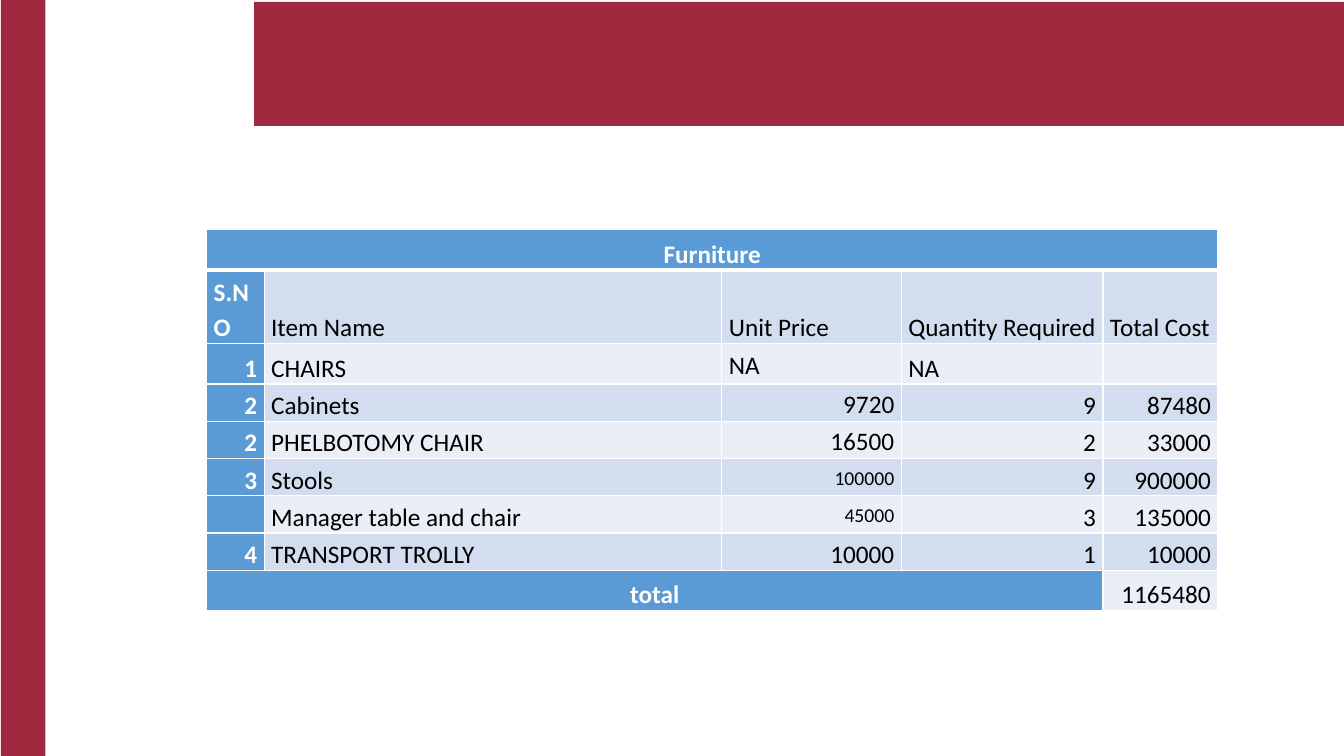
from dataclasses import dataclass

import pptx
import pptx.dml.color
import pptx.enum.shapes
import pptx.enum.text
import pptx.oxml
import pptx.oxml.ns
import pptx.util

Inches = pptx.util.Inches
Pt = pptx.util.Pt
ALIGN = pptx.enum.text.PP_ALIGN
ANCHOR = pptx.enum.text.MSO_ANCHOR


@dataclass(frozen=True)
class Theme:
    font: str = "Calibri"
    size: int = 18
    small: int = 14
    crimson: str = "A0293F"
    blue: str = "5B9BD5"
    band_dark: str = "D2DEEF"
    band_light: str = "EAEFF7"
    white: str = "FFFFFF"
    black: str = "000000"


THEME = Theme()
COL_WIDTHS = [0.57, 4.54, 1.78, 2, 1.14]
ROW_HEIGHTS = [0.4, 0.73, 0.4] + [0.37] * 5 + [0.4]
ROWS = [
    ["Furniture", "", "", "", ""],
    ["S.NO", "Item Name", "Unit Price", "Quantity Required", "Total Cost"],
    ["1", "CHAIRS", "NA", "NA", ""],
    ["2", "Cabinets", "9720", "9", "87480"],
    ["2", "PHELBOTOMY CHAIR", "16500", "2", "33000"],
    ["3", "Stools", "100000", "9", "900000"],
    ["", "Manager table and chair", "45000", "3", "135000"],
    ["4", "TRANSPORT TROLLY", "10000", "1", "10000"],
    ["total", "", "", "", "1165480"],
]
TITLE_ROW, TOTAL_ROW = 0, len(ROWS) - 1
PRICE_COL, TOTAL_COL = 2, len(COL_WIDTHS) - 1
MIDDLE_PRICE_ROWS = range(2, 7)
SMALL_PRICES = ("100000", "45000")


def rgb(color):
    return pptx.dml.color.RGBColor.from_string(color)


def write(tf, text, *, size=THEME.size, color=THEME.black, bold=False, align=ALIGN.LEFT):
    p = tf.paragraphs[0]
    p.alignment = align
    p.line_spacing = 1.15
    if not text:
        return
    r = p.add_run()
    r.text = text
    r.font.name = THEME.font
    r.font.size = Pt(size)
    r.font.bold = bold
    r.font.color.rgb = rgb(color)


def add_bar(slide, left, top, width, height):
    sp = slide.shapes.add_shape(
        pptx.enum.shapes.MSO_SHAPE.RECTANGLE,
        Inches(left), Inches(top), Inches(width), Inches(height))
    sp.shadow.inherit = False
    sp.fill.solid()
    sp.fill.fore_color.rgb = rgb(THEME.crimson)
    sp.line.fill.background()


def set_borders(cell, **widths):
    """Draw white borders, 1 pt wide unless a side (L, R, T, B) says otherwise."""
    tc_pr = cell._tc.get_or_add_tcPr()
    for side in "LRTB":
        tc_pr.append(pptx.oxml.parse_xml(
            f'<a:ln{side} {pptx.oxml.ns.nsdecls("a")} w="{Pt(widths.get(side, 1))}">'
            f'<a:solidFill><a:srgbClr val="{THEME.white}"/></a:solidFill></a:ln{side}>'))


def format_cell(cell, text, row, col):
    is_banner = row == TITLE_ROW or (row == TOTAL_ROW and col < TOTAL_COL)
    is_head = is_banner or col == 0
    band = THEME.band_dark if row % 2 else THEME.band_light
    if is_banner:
        align = ALIGN.CENTER
    else:
        align = ALIGN.RIGHT if text.isdigit() else ALIGN.LEFT

    cell.margin_left = cell.margin_right = Inches(0.07)
    cell.margin_top = cell.margin_bottom = 0
    is_middle = col == PRICE_COL and row in MIDDLE_PRICE_ROWS
    cell.vertical_anchor = ANCHOR.MIDDLE if is_middle else ANCHOR.BOTTOM
    set_borders(cell, B=3 if row == TITLE_ROW else 1, T=3 if row == TITLE_ROW + 1 else 1)
    cell.fill.solid()
    cell.fill.fore_color.rgb = rgb(THEME.blue if is_head else band)
    write(cell.text_frame, text, bold=is_head, align=align,
          size=THEME.small if col == PRICE_COL and text in SMALL_PRICES else THEME.size,
          color=THEME.white if is_head else THEME.black)


def add_furniture_table(slide, left, top):
    table = slide.shapes.add_table(
        len(ROWS), len(COL_WIDTHS), Inches(left), Inches(top),
        Inches(sum(COL_WIDTHS)), Inches(sum(ROW_HEIGHTS))).table
    for column, width in zip(table.columns, COL_WIDTHS):
        column.width = Inches(width)
    for row, height in zip(table.rows, ROW_HEIGHTS):
        row.height = Inches(height)
    for i, texts in enumerate(ROWS):
        for j, text in enumerate(texts):
            format_cell(table.cell(i, j), text, i, j)
    table.cell(TITLE_ROW, 0).merge(table.cell(TITLE_ROW, TOTAL_COL))
    table.cell(TOTAL_ROW, 0).merge(table.cell(TOTAL_ROW, TOTAL_COL - 1))


def main():
    prs = pptx.Presentation()
    prs.slide_width, prs.slide_height = Inches(13.33), Inches(7.5)
    slide = prs.slides.add_slide(prs.slide_layouts[6])
    add_bar(slide, 2.52, 0.02, 10.81, 1.23)
    add_bar(slide, 0.01, 0, 0.44, 7.5)
    add_furniture_table(slide, 2.05, 2.28)
    prs.save("out.pptx")


if __name__ == "__main__":
    main()
